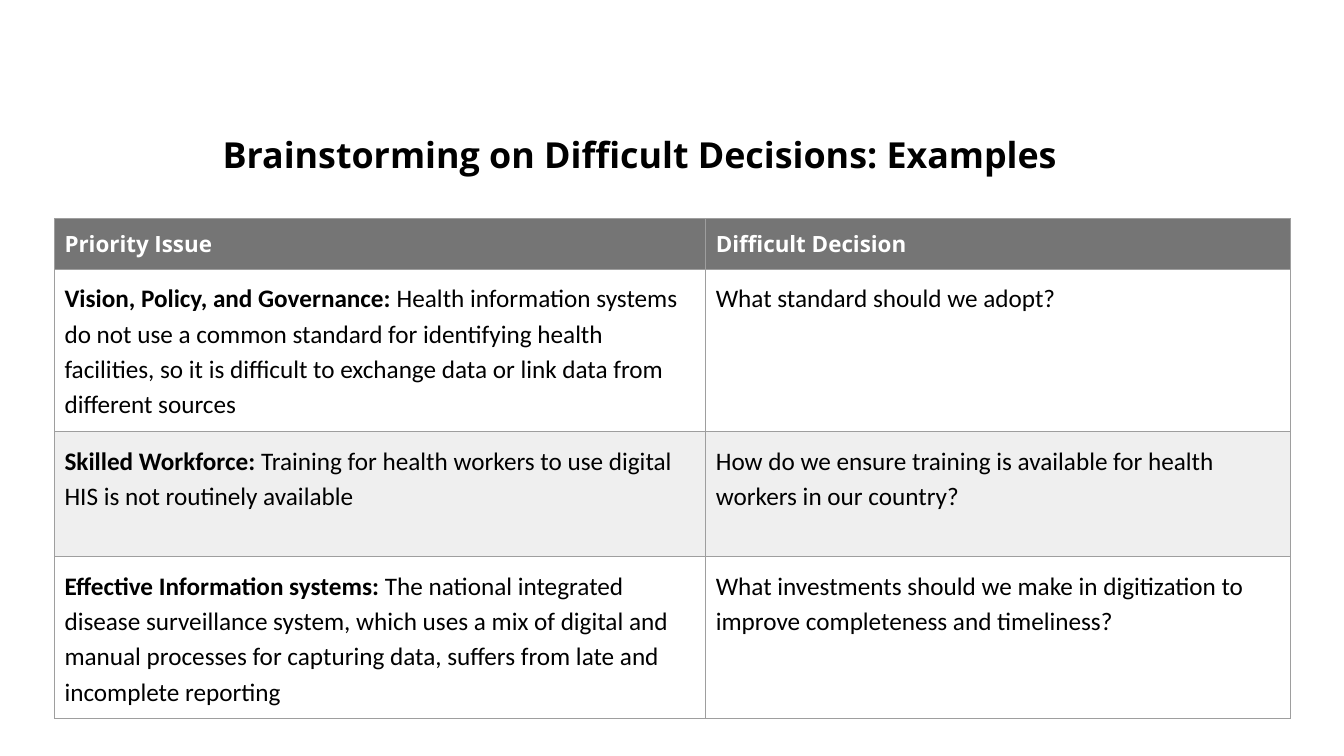
from lxml.etree import SubElement
from pptx import Presentation
from pptx.dml.color import RGBColor
from pptx.enum.text import MSO_ANCHOR
from pptx.oxml.ns import qn
from pptx.util import Inches, Pt

BLACK = RGBColor(0x00, 0x00, 0x00)
WHITE = RGBColor(0xFF, 0xFF, 0xFF)
HEADER_GRAY = RGBColor(0x75, 0x75, 0x75)
BAND_GRAY = RGBColor(0xEF, 0xEF, 0xEF)
BORDER_GRAY = RGBColor(0x9E, 0x9E, 0x9E)

HEADINGS = ["Priority Issue", "Difficult Decision"]
ISSUES = [
    ("Vision, Policy, and Governance: ",
     "Health information systems do not use a common standard for identifying "
     "health facilities, so it is difficult to exchange data or link data from "
     "different sources",
     "What standard should we adopt?"),
    ("Skilled Workforce: ",
     "Training for health workers to use digital HIS is not routinely available",
     "How do we ensure training is available for health workers in our country?"),
    ("Effective Information systems: ",
     "The national integrated disease surveillance system, which uses a mix of "
     "digital and manual processes for capturing data, suffers from late and "
     "incomplete reporting",
     "What investments should we make in digitization to improve completeness "
     "and timeliness?"),
]
COLUMN_WIDTHS = [6.46, 5.8]
ROW_HEIGHTS = [0.5, 1.61, 1.24, 1.61]


def add_run(p, text, font="Calibri", size=18, color=BLACK, bold=False):
    r = p.add_run()
    r.text = text
    r.font.name = font
    r.font.size = Pt(size)
    r.font.color.rgb = color
    r.font.bold = bold


def add_title(s, text):
    sp = s.shapes.add_textbox(Inches(2.11), Inches(1.22), Inches(9.11), Inches(0.68))
    tf = sp.text_frame
    tf.word_wrap = True
    tf.vertical_anchor = MSO_ANCHOR.MIDDLE
    p = tf.paragraphs[0]
    p.line_spacing = 0.9
    add_run(p, text, font="Open Sans", size=25.6, bold=True)


def set_borders(cell):
    tc_pr = cell._tc.get_or_add_tcPr()
    for side in ("a:lnL", "a:lnR", "a:lnT", "a:lnB"):
        line = SubElement(tc_pr, qn(side), w=str(Pt(0.75)))
        fill = SubElement(line, qn("a:solidFill"))
        SubElement(fill, qn("a:srgbClr"), val=str(BORDER_GRAY))


def format_cell(cell, fill=None):
    cell.margin_left = cell.margin_right = Inches(0.1)
    cell.margin_top = cell.margin_bottom = Inches(0.1)
    set_borders(cell)
    if fill is None:
        cell.fill.background()
    else:
        cell.fill.solid()
        cell.fill.fore_color.rgb = fill
    return cell.text_frame.paragraphs[0]


def add_issue_table(s):
    table = s.shapes.add_table(
        len(ROW_HEIGHTS), len(COLUMN_WIDTHS), Inches(0.54), Inches(2.17),
        Inches(sum(COLUMN_WIDTHS)), Inches(sum(ROW_HEIGHTS))).table
    for column, width in zip(table.columns, COLUMN_WIDTHS):
        column.width = Inches(width)
    for row, height in zip(table.rows, ROW_HEIGHTS):
        row.height = Inches(height)

    for col, heading in enumerate(HEADINGS):
        p = format_cell(table.cell(0, col), HEADER_GRAY)
        add_run(p, heading, font="Open Sans", size=16, color=WHITE, bold=True)

    for row, (topic, issue, decision) in enumerate(ISSUES, start=1):
        fill = BAND_GRAY if row % 2 == 0 else None
        issue_p, decision_p = [format_cell(table.cell(row, col), fill) for col in (0, 1)]
        issue_p.line_spacing = decision_p.line_spacing = 1.15
        add_run(issue_p, topic, bold=True)
        add_run(issue_p, issue)
        add_run(decision_p, decision)


def main():
    prs = Presentation()
    prs.slide_width = Inches(13.33)
    prs.slide_height = Inches(7.5)
    s = prs.slides.add_slide(prs.slide_layouts[6])
    add_title(s, "Brainstorming on Difficult Decisions: Examples")
    add_issue_table(s)
    prs.save("out.pptx")


if __name__ == "__main__":
    main()
